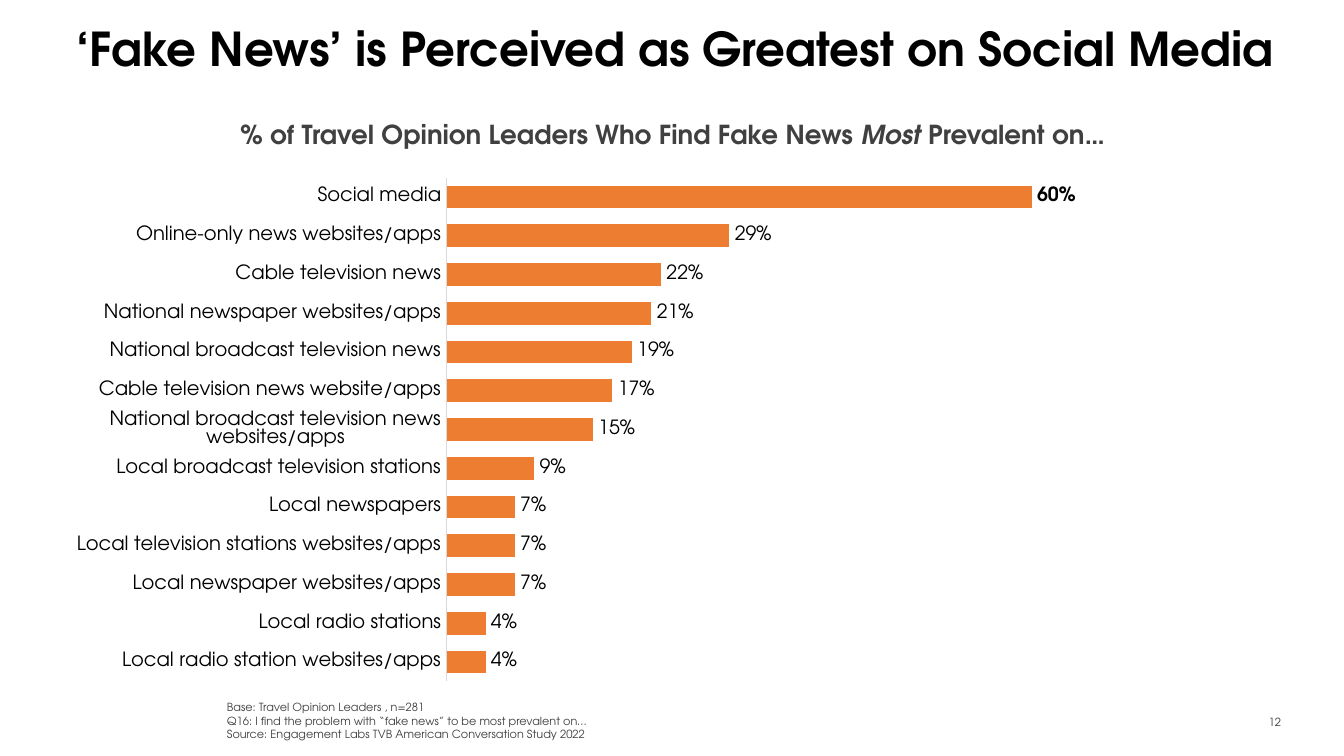
from lxml import etree
from pptx import Presentation
from pptx.chart.data import CategoryChartData as ChartData
from pptx.dml.color import RGBColor
from pptx.enum.chart import XL_CHART_TYPE as Kind, XL_LABEL_POSITION as Spot
from pptx.enum.chart import XL_TICK_MARK as Tick
from pptx.enum.text import MSO_ANCHOR as Anchor, MSO_AUTO_SIZE as Fit, PP_ALIGN as Align
from pptx.oxml.ns import qn
from pptx.util import Cm, Pt

FACE = "TeX Gyre Adventor"
BLACK, DARK, GREY, ORANGE = "000000", "404040", "D9D9D9", "ED7D31"

MEDIA = [
    ("Social media", 0.60),
    ("Online-only news websites/apps", 0.29),
    ("Cable television news", 0.22),
    ("National newspaper websites/apps", 0.21),
    ("National broadcast television news", 0.19),
    ("Cable television news website/apps", 0.17),
    ("National broadcast television news websites/apps", 0.15),
    ("Local broadcast television stations", 0.09),
    ("Local newspapers", 0.07),
    ("Local television stations websites/apps", 0.07),
    ("Local newspaper websites/apps", 0.07),
    ("Local radio stations", 0.04),
    ("Local radio station websites/apps", 0.04),
]
NOTES = [
    "Base: Travel Opinion Leaders , n=281",
    "Q16: I find the problem with “fake news” to be most prevalent on…",
    "Source: Engagement Labs TVB American Conversation Study 2022",
]


def color(code):
    return RGBColor.from_string(code)


def style(font, size, code, bold=False, italic=False):
    font.name, font.size = FACE, Pt(size)
    font.bold, font.italic = bold, italic
    font.color.rgb = color(code)


def add_run(para, text, *look):
    run = para.add_run()
    run.text = text
    style(run.font, *look)


def add_box(slide, box, anchor=Anchor.TOP, wrap=True):
    frame = slide.shapes.add_textbox(*map(Cm, box)).text_frame
    frame.word_wrap, frame.vertical_anchor = wrap, anchor
    return frame


def add_title(slide, box):
    title = slide.shapes.title
    title.left, title.top, title.width, title.height = map(Cm, box)
    frame = title.text_frame
    frame.auto_size, frame.word_wrap = Fit.NONE, True
    frame.vertical_anchor, frame.margin_top = Anchor.TOP, 0
    para = frame.paragraphs[0]
    para.alignment = Align.LEFT
    add_run(para, "‘Fake News’ is Perceived as Greatest on Social Media", 25, BLACK, True)


def add_heading(slide, box):
    para = add_box(slide, box, wrap=False).paragraphs[0]
    para.alignment = Align.CENTER
    add_run(para, "% of Travel Opinion Leaders Who Find Fake News ", 14, DARK, True)
    add_run(para, "Most", 14, DARK, True, True)
    add_run(para, " Prevalent on…", 14, DARK, True)


def set_plot(chart, x, y, w, h):
    """Fix the inner plot area, in fractions of the chart."""
    area = chart.element.find(".//" + qn("c:plotArea"))
    for old in area.findall(qn("c:layout")):
        area.remove(old)
    layout = etree.Element(qn("c:layout"))
    area.insert(0, layout)
    manual = etree.SubElement(layout, qn("c:manualLayout"))
    parts = [("layoutTarget", "inner"), ("xMode", "edge"), ("yMode", "edge"),
             ("x", x), ("y", y), ("w", w), ("h", h)]
    for tag, val in parts:
        etree.SubElement(manual, qn("c:" + tag)).set("val", str(val))


def add_bars(slide, box):
    data = ChartData(number_format="#,##0%")
    names, vals = zip(*MEDIA)
    data.categories = names
    data.add_series("Series 1", vals)
    chart = slide.shapes.add_chart(Kind.BAR_CLUSTERED, *map(Cm, box), data).chart
    chart.has_legend = chart.has_title = False
    style(chart.font, 10, BLACK)
    set_plot(chart, 0.31, 0.04, 0.56, 0.93)

    axis = chart.category_axis
    axis.reverse_order = True
    axis.major_tick_mark = axis.minor_tick_mark = Tick.NONE
    axis.format.line.color.rgb = color(GREY)
    axis.format.line.width = Pt(0.75)
    style(axis.tick_labels.font, 10.5, BLACK)

    scale = chart.value_axis
    scale.minimum_scale, scale.maximum_scale = 0, 0.7
    scale.has_major_gridlines = scale.visible = False

    plot = chart.plots[0]
    plot.gap_width, plot.vary_by_categories = 70, False
    bars = plot.series[0]
    bars.format.fill.solid()
    bars.format.fill.fore_color.rgb = color(ORANGE)

    labels = bars.data_labels
    labels.show_value = True
    labels.number_format, labels.number_format_is_linked = "#,##0%", False
    labels.position = Spot.OUTSIDE_END
    style(labels.font, 10.5, BLACK)
    top = bars.points[0].data_label
    style(top.font, 10.5, BLACK, True)
    top.position = Spot.OUTSIDE_END


def add_notes(slide, box):
    frame = add_box(slide, box, Anchor.BOTTOM)
    for i, line in enumerate(NOTES):
        para = frame.add_paragraph() if i else frame.paragraphs[0]
        add_run(para, line, 6, DARK)


def add_number(slide, box):
    para = add_box(slide, box, Anchor.MIDDLE).paragraphs[0]
    para.alignment = Align.RIGHT
    add_run(para, "12", 6, "3C3C3A")


def main():
    deck = Presentation()
    deck.slide_width, deck.slide_height = Cm(25.4), Cm(14.29)
    slide = deck.slides.add_slide(deck.slide_layouts[5])
    add_number(slide, (22.96, 13.26, 1.5, 0.76))
    add_bars(slide, (1.3, 2.95, 23.04, 10.24))
    add_title(slide, (1.19, 0.38, 23.34, 1.73))
    add_notes(slide, (4.04, 13.11, 19.13, 1.02))
    add_heading(slide, (4.04, 2.11, 17.35, 0.86))
    deck.save("out.pptx")


if __name__ == "__main__":
    main()
